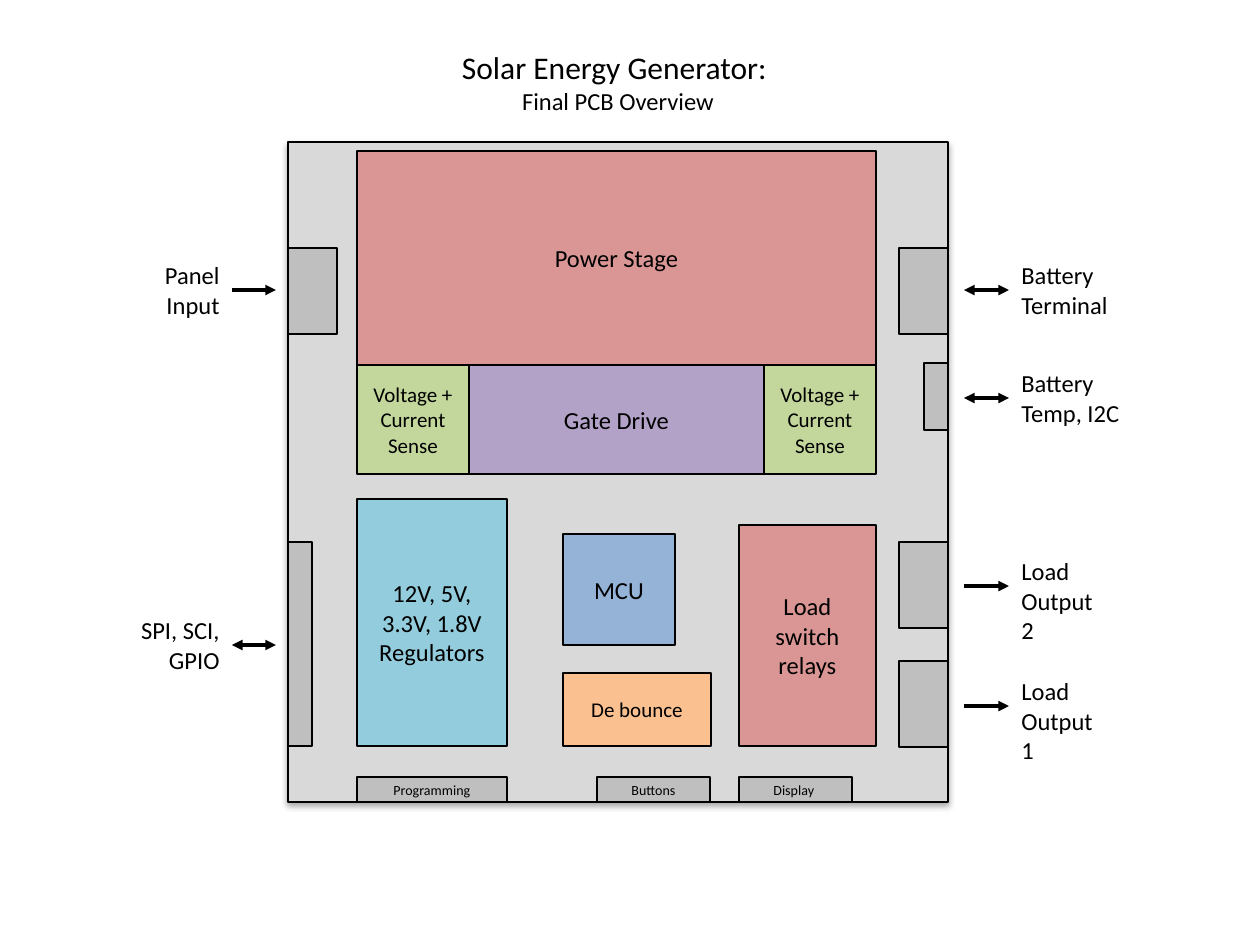
from lxml.etree import SubElement
from pptx import Presentation
from pptx.dml.color import RGBColor
from pptx.enum.shapes import MSO_CONNECTOR, MSO_SHAPE
from pptx.enum.text import MSO_ANCHOR, MSO_AUTO_SIZE, PP_ALIGN
from pptx.oxml.ns import qn
from pptx.util import Inches, Pt

SCALE = Inches(1) / 126
BLACK, BOARD, PORT = "000000", "D9D9D9", "BFBFBF"
RED, PURPLE, GREEN = "D99694", "B3A2C7", "C3D69B"
BLUE, ORANGE, TEAL = "95B3D7", "FAC090", "93CDDD"


def emu(*pixels):
    return [round(value * SCALE) for value in pixels]


def write(paragraph, text, size, alignment):
    paragraph.alignment = alignment
    run = paragraph.add_run()
    run.text = text
    run.font.name = "Calibri"
    run.font.size = Pt(size)
    run.font.color.rgb = RGBColor.from_string(BLACK)


presentation = Presentation()
presentation.slide_width, presentation.slide_height = Inches(10), Inches(7.5)
slide = presentation.slides.add_slide(presentation.slide_layouts[6])
shapes = slide.shapes

# Board, edge ports and circuit blocks: left, top, width, height, fill, text, size
blocks = [
    (288, 142, 660, 660, BOARD, "", 0),
    (288, 248, 49, 86, PORT, "", 0),
    (899, 248, 49, 86, PORT, "", 0),
    (899, 542, 49, 86, PORT, "", 0),
    (899, 661, 49, 86, PORT, "", 0),
    (288, 542, 24, 204, PORT, "", 0),
    (924, 363, 24, 67, PORT, "", 0),
    (357, 777, 150, 25, PORT, "Programming", 8),
    (597, 777, 113, 25, PORT, "Buttons", 8),
    (739, 777, 113, 25, PORT, "Display ", 8),
    (357, 151, 519, 214, RED, "Power Stage", 14),
    (469, 365, 295, 109, PURPLE, "Gate Drive", 14),
    (357, 365, 112, 109, GREEN, "Voltage + Current Sense", 12),
    (764, 365, 112, 109, GREEN, "Voltage + Current Sense", 12),
    (563, 534, 112, 111, BLUE, "MCU", 14),
    (739, 525, 137, 221, RED, "Load switch relays", 14),
    (563, 673, 148, 73, ORANGE, "De bounce", 12),
    (357, 499, 150, 247, TEAL, "12V, 5V, 3.3V, 1.8V Regulators", 14),
]
for left, top, width, height, fill, text, size in blocks:
    block = shapes.add_shape(MSO_SHAPE.RECTANGLE, *emu(left, top, width, height))
    block.shadow.inherit = False
    block.fill.solid()
    block.fill.fore_color.rgb = RGBColor.from_string(fill)
    block.line.color.rgb = RGBColor.from_string(BLACK)
    block.line.width = Pt(0.75)
    if fill == BOARD:
        effects = block.element.spPr.find(qn("a:effectLst"))
        shadow = SubElement(effects, qn("a:outerShdw"), blurRad=str(Pt(3.1)),
                            dist=str(Pt(1.8)), dir="5400000", rotWithShape="0")
        color = SubElement(shadow, qn("a:srgbClr"), val=BLACK)
        SubElement(color, qn("a:alpha"), val="35000")
    if text:
        block.text_frame.word_wrap = True
        block.text_frame.vertical_anchor = MSO_ANCHOR.MIDDLE
        write(block.text_frame.paragraphs[0], text, size, PP_ALIGN.CENTER)

# External signals: label, side, arrow height, label width, arrowheads
ONE_WAY, TWO_WAY = ["tailEnd"], ["headEnd", "tailEnd"]
signals = [
    ("Panel Input", "left", 290, 87, ONE_WAY),
    ("SPI, SCI, GPIO", "left", 645, 111, TWO_WAY),
    ("Battery Terminal", "right", 290, 134, TWO_WAY),
    ("Battery Temp, I2C", "right", 398, 152, TWO_WAY),
    ("Load Output 2", "right", 586, 113, ONE_WAY),
    ("Load Output 1", "right", 706, 113, ONE_WAY),
]
for text, side, middle, width, arrowheads in signals:
    if side == "left":
        start, end, label_left, alignment = 232, 276, 232 - width, PP_ALIGN.RIGHT
    else:
        start, end, label_left, alignment = 964, 1009, 1009, PP_ALIGN.LEFT
    label = shapes.add_textbox(*emu(label_left, middle - 36, width, 72))
    label.text_frame.word_wrap = True
    label.text_frame.auto_size = MSO_AUTO_SIZE.SHAPE_TO_FIT_TEXT
    write(label.text_frame.paragraphs[0], text, 14, alignment)

    arrow = shapes.add_connector(MSO_CONNECTOR.STRAIGHT, *emu(start, middle, end, middle))
    arrow.line.color.rgb = RGBColor.from_string(BLACK)
    arrow.line.width = Pt(2)
    for arrowhead in arrowheads:
        SubElement(arrow.line._get_or_add_ln(), qn(f"a:{arrowhead}"), type="triangle")
    SubElement(arrow._element.spPr, qn("a:effectLst"))

title = shapes.add_textbox(*emu(288, 42, 660, 81)).text_frame
title.word_wrap = True
title.auto_size = MSO_AUTO_SIZE.SHAPE_TO_FIT_TEXT
write(title.paragraphs[0], "Solar Energy Generator: ", 18, PP_ALIGN.CENTER)
write(title.add_paragraph(), "Final PCB Overview", 14, PP_ALIGN.CENTER)

presentation.save("out.pptx")
